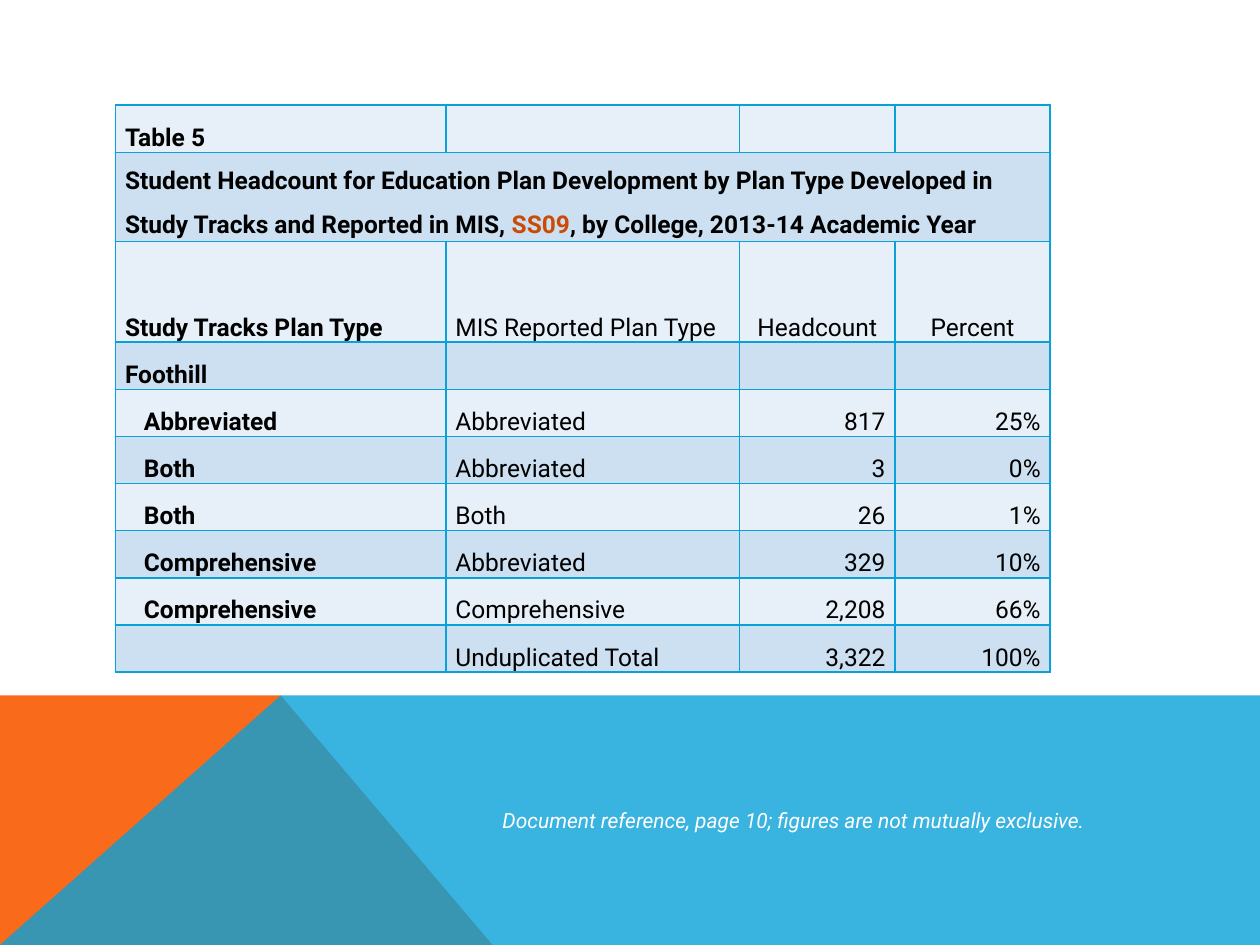
import pptx
import pptx.dml.color
import pptx.enum.text
import pptx.oxml
import pptx.oxml.ns
import pptx.util
from pptx.util import Cm

COLORS = {
    "orange": "F96A1B",
    "blue": "08A1D9",
    "light row": "E7F0F8",
    "dark row": "CCE0F1",
    "accent text": "CA4B05",
    "black": "000000",
    "white": "FFFFFF",
}
ALIGN = pptx.enum.text.PP_ALIGN
BOTTOM = pptx.enum.text.MSO_ANCHOR.BOTTOM

SLIDE_WIDTH, SLIDE_HEIGHT = 25.4, 19.05
BAND_TOP, PEAK_X = 14.02, 5.66

COLUMN_WIDTHS = [6.66, 5.92, 3.13, 3.13]
ROW_HEIGHTS = [0.95, 1.8, 2.03] + [0.95] * 7
HEADER_ROW, FIRST_PLAN_ROW = 2, 4
TITLE = [
    ("Student Headcount for Education Plan Development by Plan Type Developed in "
     "Study Tracks and Reported in MIS, ", "black"),
    ("SS09", "accent text"),
    (", by College, 2013-14 Academic Year", "black"),
]
ROWS = [
    ["Table 5", "", "", ""],
    [TITLE, "", "", ""],
    ["Study Tracks Plan Type", "MIS Reported Plan Type", "Headcount", "Percent"],
    ["Foothill", "", "", ""],
    ["Abbreviated", "Abbreviated", "817", "25%"],
    ["Both", "Abbreviated", "3", "0%"],
    ["Both", "Both", "26", "1%"],
    ["Comprehensive", "Abbreviated", "329", "10%"],
    ["Comprehensive", "Comprehensive", "2,208", "66%"],
    ["", "Unduplicated Total", "3,322", "100%"],
]


class SlideBuilder:
    font = "Roboto"

    def __init__(self, slide):
        self.slide = slide

    def color(self, name):
        return pptx.dml.color.RGBColor.from_string(COLORS[name])

    def format_run(self, run, size, color, bold=False, italic=False):
        run.font.name = self.font
        run.font.size = pptx.util.Pt(size)
        run.font.bold = bold
        run.font.italic = italic
        run.font.color.rgb = self.color(color)

    def polygon(self, points, color, opacity=100):
        """Draw a closed outline through points given in centimetres."""
        corners = [(Cm(x), Cm(y)) for x, y in points]
        builder = self.slide.shapes.build_freeform(*corners[0])
        builder.add_line_segments(corners[1:], close=True)
        shape = builder.convert_to_shape()
        shape.shadow.inherit = False
        shape.line.fill.background()
        shape.fill.solid()
        shape.fill.fore_color.rgb = self.color(color)
        if opacity < 100:
            fill_color = shape.fill._xPr.find(".//" + pptx.oxml.ns.qn("a:srgbClr"))
            fill_color.append(pptx.oxml.parse_xml(
                f'<a:alpha {pptx.oxml.ns.nsdecls("a")} val="{opacity * 1000}"/>'))

    def text(self, left, top, width, height, content, size, color):
        box = self.slide.shapes.add_textbox(Cm(left), Cm(top), Cm(width), Cm(height))
        box.text_frame.word_wrap = True
        box.text_frame.text = content
        self.format_run(box.text_frame.paragraphs[0].runs[0], size, color, italic=True)

    def cell_borders(self, cell, color):
        properties = cell._tc.get_or_add_tcPr()
        for side in ("lnL", "lnR", "lnT", "lnB"):
            properties.append(pptx.oxml.parse_xml(
                f'<a:{side} {pptx.oxml.ns.nsdecls("a")} w="12700"><a:solidFill>'
                f'<a:srgbClr val="{COLORS[color]}"/></a:solidFill></a:{side}>'))

    def cell(self, cell, content, fill, bold, alignment, indent):
        """Fill one cell; content is a string or a list of (text, color) runs."""
        cell.margin_left = cell.margin_right = Cm(0.19)
        cell.margin_top = cell.margin_bottom = 0
        cell.vertical_anchor = BOTTOM
        self.cell_borders(cell, "blue")
        cell.fill.solid()
        cell.fill.fore_color.rgb = self.color(fill)
        if not content:
            return
        paragraph = cell.text_frame.paragraphs[0]
        paragraph.line_spacing = 1.5
        paragraph.alignment = alignment
        if indent:
            paragraph._p.get_or_add_pPr().set("marL", str(Cm(indent)))
        parts = [(content, "black")] if isinstance(content, str) else content
        for text, color in parts:
            run = paragraph.add_run()
            run.text = text
            self.format_run(run, 14, color, bold=bold)

    def table(self, left, top, rows, widths, heights):
        table = self.slide.shapes.add_table(
            len(rows), len(widths), Cm(left), Cm(top),
            Cm(sum(widths)), Cm(sum(heights))).table
        table.first_row = table.horz_banding = False
        for column, width in zip(table.columns, widths):
            column.width = Cm(width)
        for row, height in zip(table.rows, heights):
            row.height = Cm(height)
        for row_index, row in enumerate(rows):
            fill = "dark row" if row_index % 2 else "light row"
            number_alignment = ALIGN.CENTER if row_index == HEADER_ROW else ALIGN.RIGHT
            for column_index, content in enumerate(row):
                first = column_index == 0
                self.cell(
                    table.cell(row_index, column_index), content, fill, bold=first,
                    alignment=ALIGN.LEFT if column_index < 2 else number_alignment,
                    indent=0.38 if first and row_index >= FIRST_PLAN_ROW else 0)
        return table


def main():
    presentation = pptx.Presentation()
    presentation.slide_width = Cm(SLIDE_WIDTH)
    presentation.slide_height = Cm(SLIDE_HEIGHT)
    builder = SlideBuilder(presentation.slides.add_slide(presentation.slide_layouts[6]))

    builder.polygon([(0, SLIDE_HEIGHT), (0, BAND_TOP), (PEAK_X, BAND_TOP),
                     (9.93, SLIDE_HEIGHT)], "orange")
    builder.polygon([(0, SLIDE_HEIGHT), (PEAK_X, BAND_TOP), (SLIDE_WIDTH, BAND_TOP),
                     (SLIDE_WIDTH, SLIDE_HEIGHT)], "blue", opacity=80)

    table = builder.table(2.33, 2.12, ROWS, COLUMN_WIDTHS, ROW_HEIGHTS)
    table.cell(1, 0).merge(table.cell(1, 3))
    table.cell(1, 0).vertical_anchor = pptx.enum.text.MSO_ANCHOR.TOP

    builder.text(9.88, 16.15, 13.49, 0.77,
                 "Document reference, page 10; figures are not mutually exclusive.",
                 12, "white")
    presentation.save("out.pptx")


if __name__ == "__main__":
    main()
